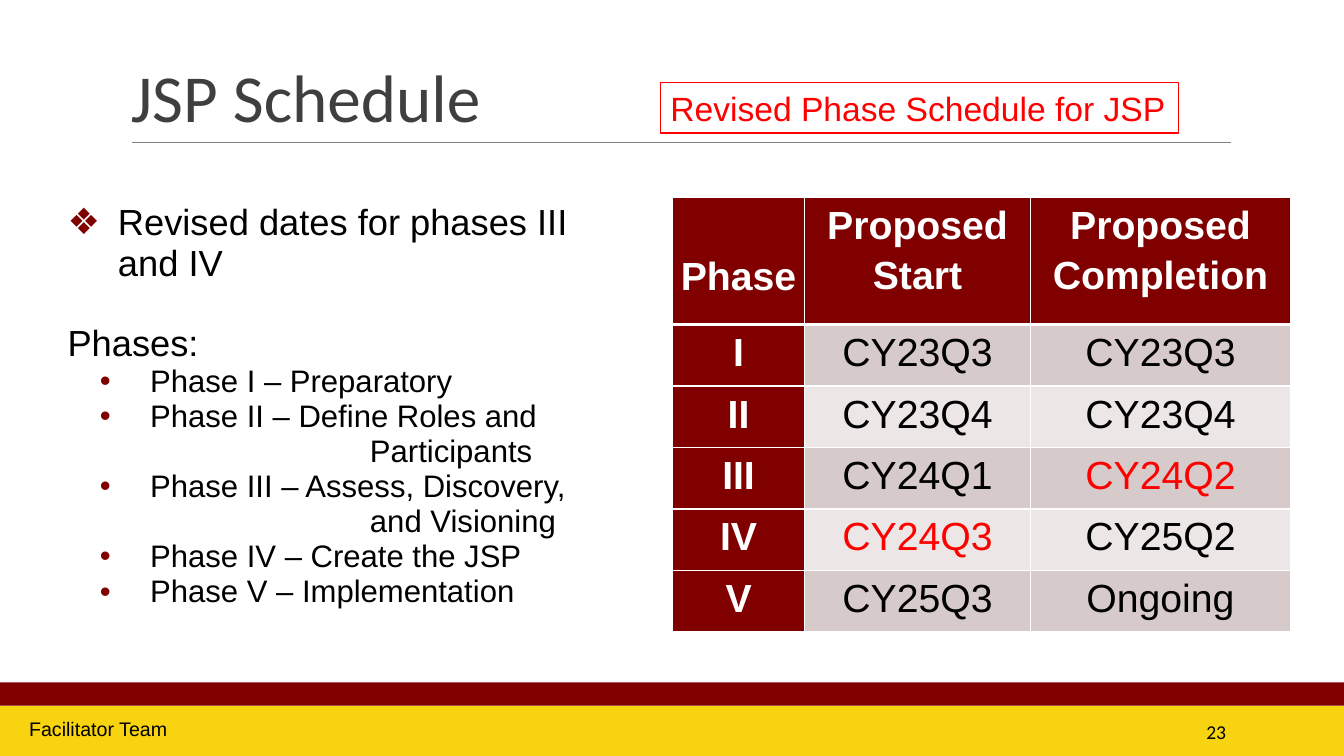
from lxml import etree
from pptx import Presentation
from pptx import util as u
from pptx.dml.color import RGBColor
from pptx.enum import shapes, text
from pptx.oxml.ns import qn

COLORS = {
    "maroon": "800000", "gold": "F8D410", "rule": "7F7F7F", "title": "3F3F3F",
    "black": "000000", "white": "FFFFFF", "red": "FF0000",
    "band_dark": "D7CACA", "band_light": "ECE6E6",
}
ALIGN = text.PP_ALIGN
ANCHOR = text.MSO_ANCHOR

# text, level style, space before in points
BODY = [
    ("Revised dates for phases III and IV", "lead", 0),
    ("Phases:", "heading", 28),
    ("Phase I – Preparatory", "item", 0),
    ("Phase II – Define Roles and", "item", 0),
    ("Participants", "continued", 0),
    ("Phase III – Assess, Discovery,", "item", 0),
    ("and Visioning", "continued", 0),
    ("Phase IV – Create the JSP", "item", 0),
    ("Phase V – Implementation", "item", 0),
]
# left margin, first-line indent, size, bullet
BODY_STYLES = {
    "lead": (0.5, -0.5, 25.9, "❖"),
    "heading": (0, 0, 25.9, None),
    "item": (0.82, -0.5, 22.2, "•"),
    "continued": (3, 0, 22.2, None),
}
BODY_INSET = 0.25

SCHEDULE = [
    ("Phase", "Proposed Start", "Proposed Completion"),
    ("I", "CY23Q3", "CY23Q3"),
    ("II", "CY23Q4", "CY23Q4"),
    ("III", "CY24Q1", "CY24Q2"),
    ("IV", "CY24Q3", "CY25Q2"),
    ("V", "CY25Q3", "Ongoing"),
]
REVISED = {(3, 2), (4, 1)}
COLUMN_WIDTHS = (1.31, 2.24, 2.58)
HEADER_HEIGHT, ROW_HEIGHT = 1.26, 0.61


def rgb(name):
    return RGBColor.from_string(COLORS[name])


def style_font(font, size, color, name="Arial", bold=False):
    for key, value in {"size": u.Pt(size), "name": name, "bold": bold}.items():
        setattr(font, key, value)
    font.color.rgb = rgb(color)


def set_frame(tf, anchor=ANCHOR.TOP, insets=(0.1, 0.05, 0.1, 0.05)):
    tf.word_wrap = True
    tf.vertical_anchor = anchor
    for side, inset in zip(("left", "top", "right", "bottom"), insets):
        setattr(tf, "margin_" + side, u.Inches(inset))


def add_text(s, box, words, size, color, name="Arial", anchor=ANCHOR.TOP,
             align=ALIGN.LEFT, spacing=1.0):
    sp = s.shapes.add_textbox(*map(u.Inches, box))
    set_frame(sp.text_frame, anchor)
    p = sp.text_frame.paragraphs[0]
    p.alignment, p.line_spacing = align, spacing
    r = p.add_run()
    r.text = words
    style_font(r.font, size, color, name)
    return sp


def add_band(s, box, color):
    sp = s.shapes.add_shape(shapes.MSO_SHAPE.RECTANGLE, *map(u.Inches, box))
    sp.shadow.inherit = False
    sp.fill.solid()
    sp.fill.fore_color.rgb = rgb(color)
    sp.line.fill.background()


def add_footer(s, left, top, width, height):
    """Maroon strip over a gold bar, with the team name and page number."""
    strip = 0.23
    add_band(s, (left, top + strip, width, height - strip), "gold")
    add_band(s, (left, top, width, strip), "maroon")
    add_text(s, (left + 0.19, top + 0.29, 2.27, 0.34), "Facilitator Team", 14, "black")
    add_text(s, (left + width - 2.5, top + 0.29, 1.43, 0.4), "23", 14, "black",
             "Calibri", ANCHOR.MIDDLE, ALIGN.RIGHT)


def add_heading(s, left, top, width, height):
    """Title above a thin rule, with the red note at the right."""
    add_text(s, (left, top, width, height), "JSP Schedule", 48, "title", "Calibri",
             ANCHOR.BOTTOM, spacing=0.85)
    rule_y = u.Inches(top + height + 0.01)
    rule = s.shapes.add_connector(shapes.MSO_CONNECTOR.STRAIGHT, u.Inches(left + 0.11),
                                  rule_y, u.Inches(left + width + 0.01), rule_y)
    rule.line.color.rgb = rgb("rule")
    rule.line.width = u.Pt(0.75)
    etree.SubElement(rule.element.spPr, qn("a:effectLst"))
    note = add_text(s, (left + 5.35, top + 0.51, 5.14, 0.5),
                    "Revised Phase Schedule for JSP", 24, "red")
    note.line.color.rgb = rgb("red")
    note.line.width = u.Pt(1)


def set_bullet(p, margin, indent, bullet):
    pPr = p._p.get_or_add_pPr()
    pPr.set("marL", str(u.Inches(margin)))
    pPr.set("indent", str(u.Inches(indent)))
    if bullet:
        color = etree.SubElement(pPr, qn("a:buClr"))
        etree.SubElement(color, qn("a:srgbClr"), val=COLORS["maroon"])
        etree.SubElement(pPr, qn("a:buFont"), typeface="Arial")
        etree.SubElement(pPr, qn("a:buChar"), char=bullet)


def add_body(s, left, top, width, height):
    sp = s.shapes.add_textbox(*map(u.Inches, (left, top, width, height)))
    tf = sp.text_frame
    set_frame(tf, insets=(0, 0.05, 0.1, 0.05))
    for i, (words, style, before) in enumerate(BODY):
        margin, indent, size, bullet = BODY_STYLES[style]
        p = tf.add_paragraph() if i else tf.paragraphs[0]
        p.line_spacing = 0.94
        p.space_before = u.Pt(before)
        set_bullet(p, margin + BODY_INSET, indent, bullet)
        r = p.add_run()
        r.text = words
        style_font(r.font, size, "black")


def set_borders(cell, widths):
    tcPr = cell._tc.get_or_add_tcPr()
    for side, width in zip("LRTB", widths):
        ln = etree.SubElement(tcPr, qn("a:ln" + side), w=str(u.Pt(width)))
        fill = etree.SubElement(ln, qn("a:solidFill"))
        etree.SubElement(fill, qn("a:srgbClr"), val=COLORS["white"])


def fill_cell(cell, words, row, col):
    label = row == 0 or col == 0
    set_borders(cell, (1, 1, 3 if row == 1 else 1, 3 if row == 0 else 1))
    cell.fill.solid()
    band = "band_dark" if row % 2 else "band_light"
    cell.fill.fore_color.rgb = rgb("maroon" if label else band)
    # "Phase" sits level with the second line of the other headings
    drop = 0.51 if row == col == 0 else 0
    margins = {"left": 0.07, "right": 0.07, "top": drop, "bottom": 0}
    for side, margin in margins.items():
        setattr(cell, "margin_" + side, u.Inches(margin))
    p = cell.text_frame.paragraphs[0]
    p.alignment, p.line_spacing = ALIGN.CENTER, 1.15
    r = p.add_run()
    r.text = words
    color = "white" if label else "red" if (row, col) in REVISED else "black"
    style_font(r.font, 28, color, bold=label)


def add_schedule(s, left, top, width, height):
    frame = s.shapes.add_table(len(SCHEDULE), len(COLUMN_WIDTHS),
                               *map(u.Inches, (left, top, width, height)))
    table = frame.table
    for column, column_width in zip(table.columns, COLUMN_WIDTHS):
        column.width = u.Inches(column_width)
    for row, values in enumerate(SCHEDULE):
        table.rows[row].height = u.Inches(ROW_HEIGHT if row else HEADER_HEIGHT)
        for col, words in enumerate(values):
            fill_cell(table.cell(row, col), words, row, col)


def main():
    prs = Presentation()
    prs.slide_width, prs.slide_height = u.Inches(13.33), u.Inches(7.5)
    s = prs.slides.add_slide(prs.slide_layouts[6])
    add_footer(s, 0, 6.77, 13.33, 0.73)
    add_heading(s, 1.2, 0.31, 11, 1.09)
    add_body(s, 0.42, 1.96, 5.9, 4.3)
    add_schedule(s, 6.67, 1.96, 6.13, 4.3)
    prs.save("out.pptx")


if __name__ == "__main__":
    main()
